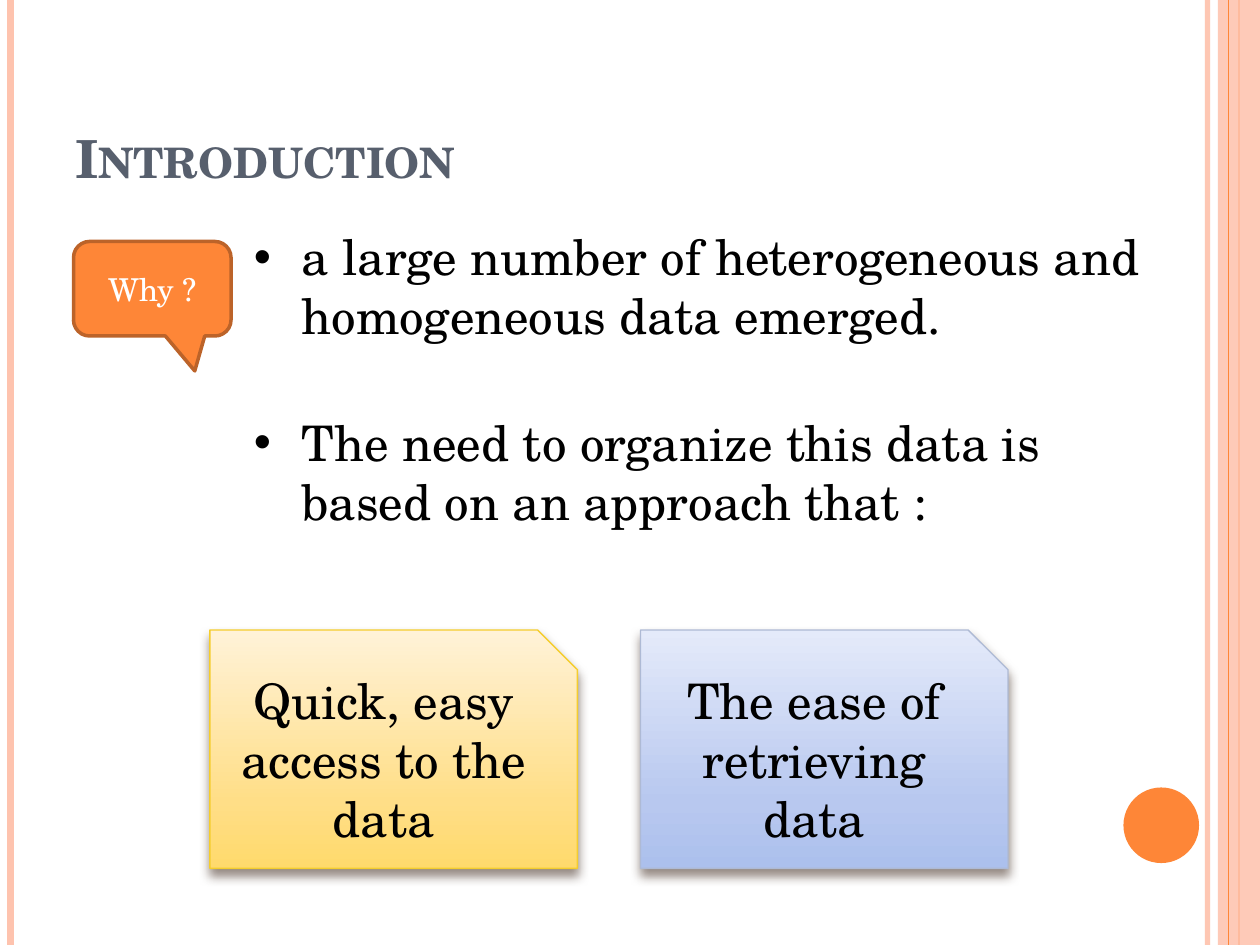
from lxml.etree import SubElement
from pptx import Presentation
from pptx.dml.color import RGBColor
from pptx.enum.shapes import MSO_CONNECTOR, MSO_SHAPE
from pptx.enum.text import MSO_ANCHOR, PP_ALIGN
from pptx.oxml import parse_xml
from pptx.oxml.ns import nsdecls, qn
from pptx.util import Inches, Pt

COLORS = {
    "orange": "FE8637", "peach": "FEC3AE", "rust": "BC6329", "slate": "575F6D",
    "black": "000000", "white": "FFFFFF", "shadow": "4E3B30",
}
FONT = "TeX Gyre Schola"

deck = Presentation()
deck.slide_width, deck.slide_height = Inches(10), Inches(7.5)
page = deck.slides.add_slide(deck.slide_layouts[6])
UNIT = deck.slide_width // 120  # grid of 120 columns by 90 rows


def grid(*cells):
    return [round(cell * UNIT) for cell in cells]


def write(shape, lines, size, color, align=PP_ALIGN.CENTER, anchor=MSO_ANCHOR.MIDDLE):
    frame = shape.text_frame
    frame.word_wrap = True
    frame.vertical_anchor = anchor
    frame.text = "\n".join(lines)
    for para in frame.paragraphs:
        para.alignment = align
        font = para.runs[0].font
        font.name, font.size = FONT, Pt(size)
        font.color.rgb = RGBColor.from_string(COLORS[color])
    return frame.paragraphs


# Side stripes: column, colour, weight, opacity; the band lies over the third
stripes = [(115, "peach", 3, 93), (1, "peach", 4.5, 100),
           (118, "orange", 1.5, 100), (117, "orange", 0.75, 100)]
for column, color, weight, opacity in stripes:
    if column == 117:
        band = page.shapes.add_shape(MSO_SHAPE.RECTANGLE, *grid(116, 0, 4, 90))
        band.shadow.inherit = False
        band.fill.solid()
        band.fill.fore_color.rgb = RGBColor.from_string(COLORS["peach"])
        band.line.fill.background()
        band_color = band.fill._xPr.find(".//" + qn("a:srgbClr"))
        SubElement(band_color, qn("a:alpha"), val="87000")
    stripe = page.shapes.add_connector(MSO_CONNECTOR.STRAIGHT, *grid(column, 0, column, 90))
    stripe.line.width = Pt(weight)
    stripe.line.color.rgb = RGBColor.from_string(COLORS[color])
    stripe_color = stripe._element.spPr.find(".//" + qn("a:srgbClr"))
    SubElement(stripe_color, qn("a:alpha"), val=str(opacity * 1000))
    SubElement(stripe._element.spPr, qn("a:effectLst"))

# Corner dot
dot = page.shapes.add_shape(MSO_SHAPE.OVAL, *grid(107, 75, 7.2, 7.2))
dot.shadow.inherit = False
dot.fill.solid()
dot.fill.fore_color.rgb = RGBColor.from_string(COLORS["orange"])
dot.line.fill.background()

# Title in small capitals
title = page.shapes.add_textbox(*grid(6, 3.6, 108, 15))
heading = write(title, ["Introduction"], 30, "slate", PP_ALIGN.LEFT, MSO_ANCHOR.BOTTOM)[0]
heading.runs[0].font.bold = True
heading.runs[0].font._element.set("cap", "small")

# Bulleted reasons
reasons = page.shapes.add_textbox(*grid(23, 21, 89, 59.4))
bullets = write(reasons, [
    "a large number of heterogeneous and homogeneous data emerged.",
    "The need to organize this data is based on an approach that :",
], 28, "black", PP_ALIGN.LEFT, MSO_ANCHOR.TOP)
for para, gap in zip(bullets, (5.6, 39)):
    para.space_before = Pt(gap)
    properties = para._p.get_or_add_pPr()
    properties.set("marL", str(Inches(0.38)))
    properties.set("indent", str(-Inches(0.38)))
    SubElement(properties, qn("a:buFont"), typeface="Arial")
    SubElement(properties, qn("a:buChar"), char="•")

# Benefit cards: left column, text, gradient, outline
cards = [
    (20, "Quick, easy access to the data", ("FFF2D8", "FFDE87", "FFDA6C"), "F5CD2D"),
    (61, "The ease of retrieving data", ("E4EAFA", "B8C8EF", "ACC0ED"), "AEBAD5"),
]
for column, text, shades, outline in cards:
    card = page.shapes.add_shape(MSO_SHAPE.SNIP_1_RECTANGLE, *grid(column, 60, 35, 22.7))
    card.line.width = Pt(0.79)
    card.line.color.rgb = RGBColor.from_string(outline)
    stops = "".join(
        f'<a:gs pos="{share * 1000}"><a:srgbClr val="{shade}"/></a:gs>'
        for share, shade in zip((0, 72, 100), shades))
    card._element.spPr.find(qn("a:prstGeom")).addnext(parse_xml(
        f'<a:gradFill {nsdecls("a")} rotWithShape="1"><a:gsLst>{stops}</a:gsLst>'
        '<a:lin ang="5400000" scaled="0"/></a:gradFill>'))
    card._element.spPr.append(parse_xml(
        f'<a:effectLst {nsdecls("a")}><a:outerShdw blurRad="{Pt(6)}" dist="{Pt(4)}" '
        f'dir="5400000" rotWithShape="0"><a:srgbClr val="{COLORS["shadow"]}">'
        '<a:alpha val="60000"/></a:srgbClr></a:outerShdw></a:effectLst>'))
    write(card, [text], 28, "black")

# Question callout
callout = page.shapes.add_shape(MSO_SHAPE.ROUNDED_RECTANGULAR_CALLOUT, *grid(7, 23, 15, 9))
callout.shadow.inherit = False
for index, value in enumerate((0.27, 0.87, 0.17)):
    callout.adjustments[index] = value
callout.fill.solid()
callout.fill.fore_color.rgb = RGBColor.from_string(COLORS["orange"])
callout.line.width = Pt(2)
callout.line.color.rgb = RGBColor.from_string(COLORS["rust"])
write(callout, ["Why ?"], 18, "white")

deck.save("out.pptx")
